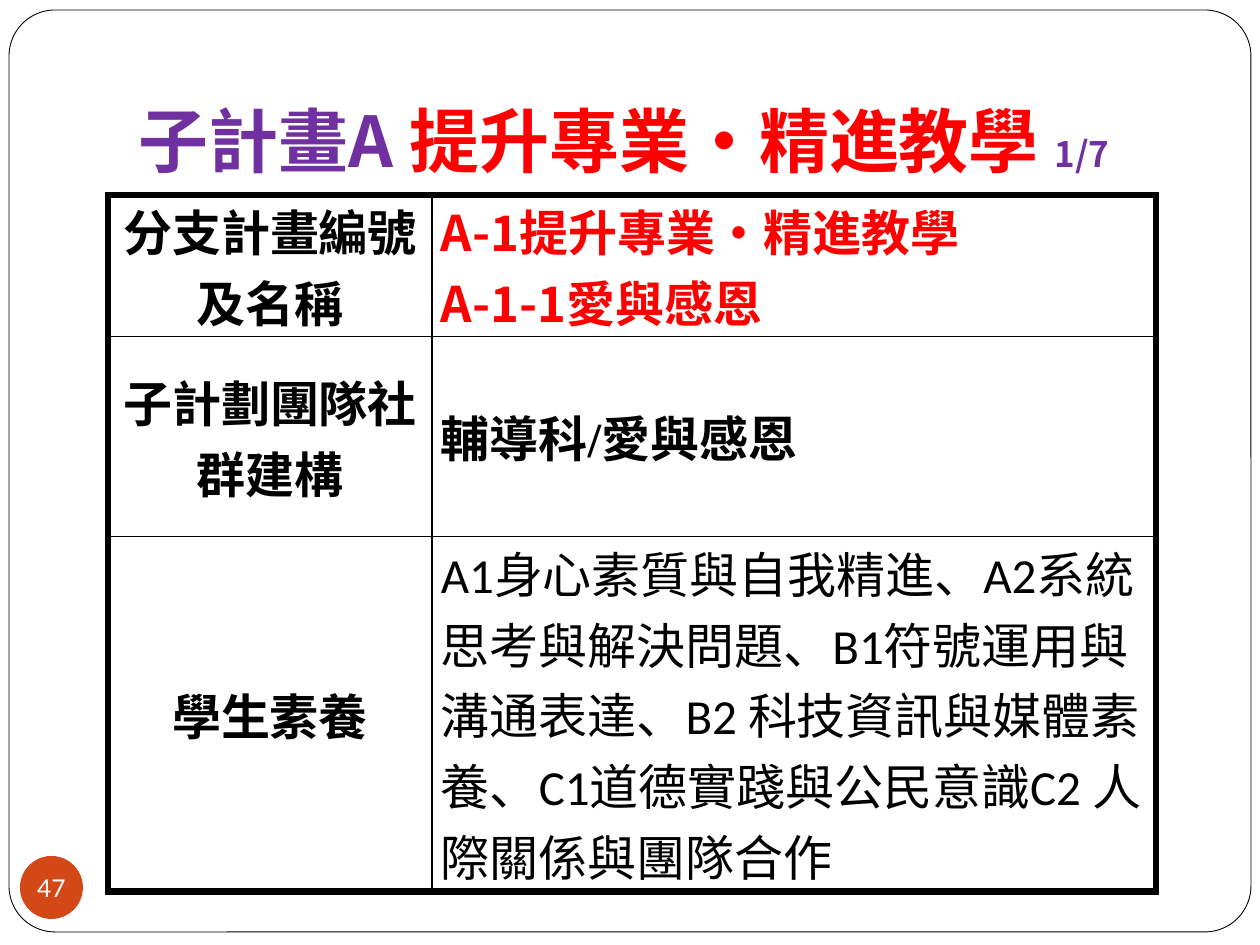
from lxml import etree
from pptx import Presentation, util as u
from pptx.dml.color import RGBColor
from pptx.enum import shapes, text
from pptx.oxml.ns import qn

PX_PER_INCH = 126
BLACK = RGBColor(0, 0, 0)
WHITE = RGBColor(255, 255, 255)
RED = RGBColor(255, 0, 0)
PURPLE = RGBColor(0x70, 0x30, 0xA0)
ORANGE = RGBColor(0xD3, 0x48, 0x17)
SANS = "Noto Sans CJK SC"
SERIF = "Times New Roman"
LEFT, CENTER = text.PP_ALIGN.LEFT, text.PP_ALIGN.CENTER
MIDDLE, TOP = text.MSO_ANCHOR.MIDDLE, text.MSO_ANCHOR.TOP


def px(length):
    return u.Inches(length / PX_PER_INCH)


def add_span(para, words, size, font, color, bold=False):
    span = para.add_run()
    span.text = words
    span.font.size = u.Pt(size)
    span.font.name = font
    span.font.bold = bold
    span.font.color.rgb = color
    east_asian = etree.Element(qn("a:ea"), typeface=SANS)
    span.font._element.find(qn("a:latin")).addnext(east_asian)


def set_margins(frame, left, top, right, bottom):
    frame.margin_left, frame.margin_top = px(left), px(top)
    frame.margin_right, frame.margin_bottom = px(right), px(bottom)


def add_panel(page, kind, left, top, width, height, fill):
    panel = page.shapes.add_shape(kind, px(left), px(top), px(width), px(height))
    panel.shadow.inherit = False
    panel.fill.solid()
    panel.fill.fore_color.rgb = fill
    return panel


def add_frame(page):
    frame = add_panel(page, shapes.MSO_SHAPE.ROUNDED_RECTANGLE, 9, 10, 1242, 922, WHITE)
    frame.adjustments[0] = 0.05
    frame.line.color.rgb = BLACK
    frame.line.width = u.Pt(0.5)
    # Send behind the title
    page.shapes._spTree.insert(2, frame._element)


def fill_title(page, spans):
    title = page.shapes.title
    title.left, title.top, title.width, title.height = px(126), px(38), px(1071), px(157)
    box = title.text_frame
    box.word_wrap = True
    box.auto_size = text.MSO_AUTO_SIZE.NONE
    box.vertical_anchor = text.MSO_ANCHOR.BOTTOM
    set_margins(box, 13, 6, 13, 13)
    para = box.paragraphs[0]
    para.alignment = LEFT
    for words, size, color in spans:
        add_span(para, words, size, SANS, color, bold=True)


def set_borders(cell, left, right, top, bottom):
    props = cell._tc.get_or_add_tcPr()
    for side, width in zip("LRTB", (left, right, top, bottom)):
        line = etree.SubElement(props, qn(f"a:ln{side}"), w=str(u.Pt(width)))
        fill = etree.SubElement(line, qn("a:solidFill"))
        etree.SubElement(fill, qn("a:srgbClr"), val=str(BLACK))


def fill_cell(cell, lines, align, anchor, font, color, bold):
    cell.fill.solid()
    cell.fill.fore_color.rgb = WHITE
    cell.vertical_anchor = anchor
    set_margins(cell, 9, 0, 9, 0)
    for index, words in enumerate(lines):
        box = cell.text_frame
        para = box.add_paragraph() if index else box.paragraphs[0]
        para.alignment = align
        add_span(para, words, 28, font, color, bold)


def add_plan_table(page, rows):
    widths, heights = (324, 724), (118, 200, 355)
    holder = page.shapes.add_table(len(rows), 2, px(108), px(195), px(sum(widths)), px(sum(heights)))
    table = holder.table
    table.first_row = table.horz_banding = False
    for column, width in zip(table.columns, widths):
        column.width = px(width)
    for row, height in zip(table.rows, heights):
        row.height = px(height)

    # Thick outer edges, thin inner ones
    last = len(rows) - 1
    for r, (label, lines, anchor, font, color, bold) in enumerate(rows):
        top = 3.75 if r == 0 else 1
        bottom = 4.5 if r == last else 1
        head, body = table.cell(r, 0), table.cell(r, 1)
        set_borders(head, 3.75, 1, top, bottom)
        set_borders(body, 1, 3.75, top, bottom)
        fill_cell(head, [label], CENTER, MIDDLE, SERIF, BLACK, True)
        fill_cell(body, lines, LEFT, anchor, font, color, bold)


def add_page_number(page, number):
    badge = add_panel(page, shapes.MSO_SHAPE.OVAL, 20, 856, 63, 63, ORANGE)
    badge.line.fill.background()
    box = badge.text_frame
    box.word_wrap = False
    box.vertical_anchor = MIDDLE
    set_margins(box, 0, 0, 0, 0)
    box.paragraphs[0].alignment = CENTER
    add_span(box.paragraphs[0], number, 14, "Lato", WHITE)


def main():
    deck = Presentation()
    deck.slide_width, deck.slide_height = px(1260), px(945)
    page = deck.slides.add_slide(deck.slide_layouts[5])

    # Frame and heading
    add_frame(page)
    fill_title(page, [
        ("子計畫A ", 40, PURPLE),
        ("提升專業‧精進教學 ", 40, RED),
        ("1/7", 20, PURPLE),
    ])

    # Plan details: label, lines, anchor, font, colour, bold
    literacy = ("A1身心素質與自我精進、A2系統思考與解決問題、B1符號運用與溝通表達、"
                "B2 科技資訊與媒體素養、C1道德實踐與公民意識C2 人際關係與團隊合作")
    add_plan_table(page, [
        ("分支計畫編號及名稱", ["A-1提升專業‧精進教學", "A-1-1愛與感恩"],
         MIDDLE, SANS, RED, True),
        ("子計劃團隊社群建構", ["輔導科/愛與感恩"], MIDDLE, SERIF, BLACK, True),
        ("學生素養", [literacy], TOP, "Calibri", BLACK, False),
    ])

    add_page_number(page, "47")
    deck.save("out.pptx")


if __name__ == "__main__":
    main()
